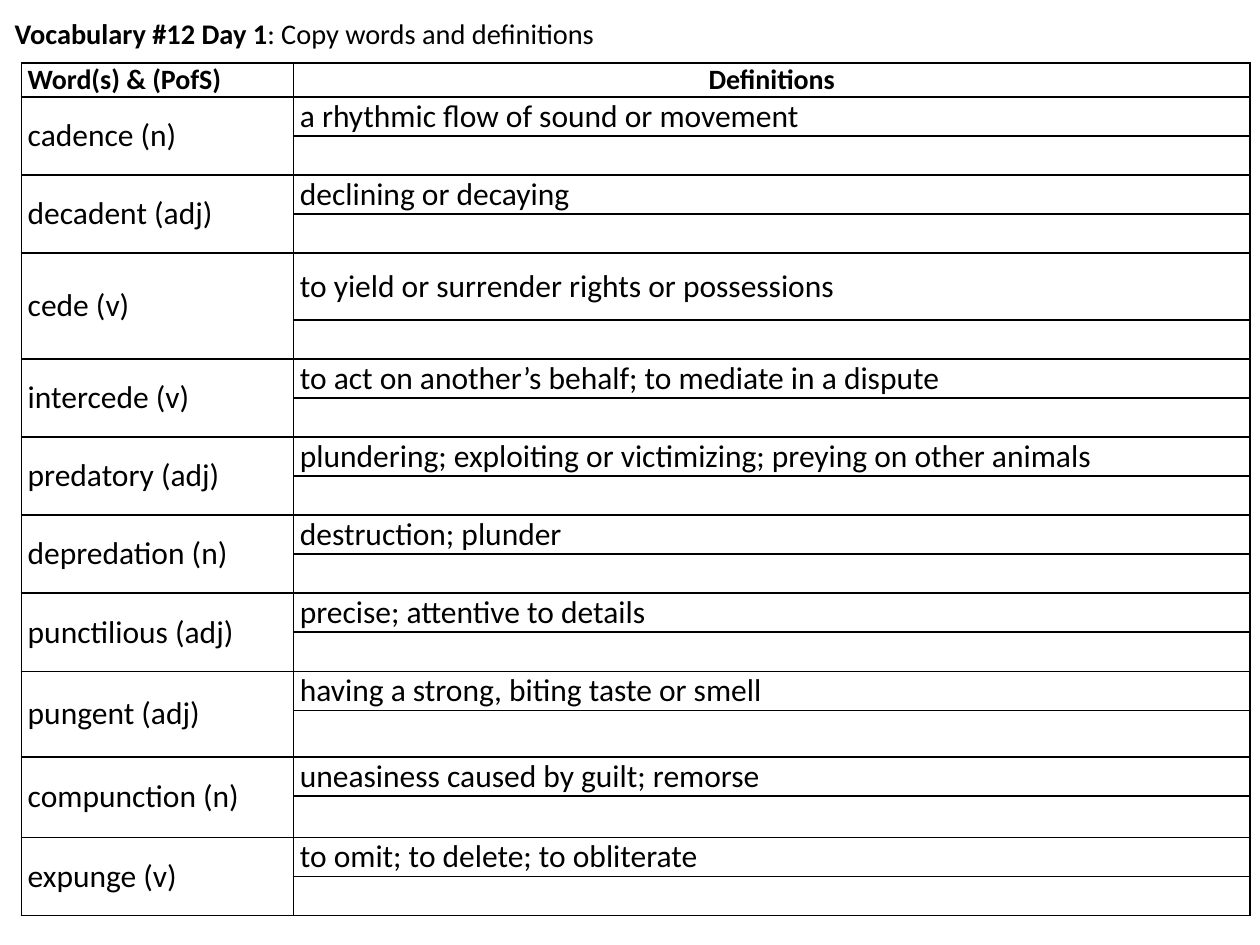
import dataclasses

import lxml.etree
import pptx
import pptx.dml.color
import pptx.enum.text
import pptx.oxml.ns
import pptx.util

Inches = pptx.util.Inches
ALIGN = pptx.enum.text.PP_ALIGN
MIDDLE = pptx.enum.text.MSO_ANCHOR.MIDDLE


@dataclasses.dataclass(frozen=True)
class Theme:
    """Colours, font and type sizes of the slide."""
    font: str = "Calibri"
    ink: str = "000000"
    paper: str = "FFFFFF"
    title: float = 16.2
    header: float = 16
    body: float = 18
    border: float = 1


class VocabularySlide:
    """Draws styled elements on the current slide."""

    def __init__(self, slide, theme):
        self.slide = slide
        self.theme = theme

    def add_text(self, p, text, **formats):
        r = p.add_run()
        r.text = text
        for name, value in {"name": self.theme.font, **formats}.items():
            setattr(r.font, name, value)
        r.font.color.rgb = pptx.dml.color.RGBColor.from_string(self.theme.ink)

    def title(self, box, lead, rest):
        tf = self.slide.shapes.add_textbox(*map(Inches, box)).text_frame
        formats = {"word_wrap": True, "vertical_anchor": MIDDLE,
                   "margin_left": 0, "margin_right": 0}
        for name, value in formats.items():
            setattr(tf, name, value)
        p = tf.paragraphs[0]
        p.alignment = ALIGN.CENTER
        size = pptx.util.Pt(self.theme.title)
        self.add_text(p, lead, size=size, bold=True)
        self.add_text(p, rest, size=size, bold=False)

    def table(self, box, widths, heights):
        frame = self.slide.shapes.add_table(
            len(heights), len(widths), *map(Inches, box))
        table = frame.table
        table.first_row = table.horz_banding = False
        for column, width in zip(table.columns, widths):
            column.width = Inches(width)
        for row, height in zip(table.rows, heights):
            row.height = Inches(height)
        for cell in table.iter_cells():
            self.style_cell(cell)
        return table

    def style_cell(self, cell):
        formats = {"margin_left": Inches(0.05), "margin_right": Inches(0.05),
                   "margin_top": 0, "margin_bottom": 0,
                   "vertical_anchor": MIDDLE}
        for name, value in formats.items():
            setattr(cell, name, value)
        cell.fill.solid()
        cell.fill.fore_color.rgb = pptx.dml.color.RGBColor.from_string(
            self.theme.paper)
        qn = pptx.oxml.ns.qn
        props = cell._tc.get_or_add_tcPr()
        for i, side in enumerate(("a:lnL", "a:lnR", "a:lnT", "a:lnB")):
            line = lxml.etree.Element(
                qn(side), w=str(pptx.util.Pt(self.theme.border)))
            fill = lxml.etree.SubElement(line, qn("a:solidFill"))
            lxml.etree.SubElement(fill, qn("a:srgbClr"), val=self.theme.ink)
            props.insert(i, line)

    def cell_text(self, cell, text, size, bold=False, align=ALIGN.LEFT):
        p = cell.text_frame.paragraphs[0]
        p.alignment = align
        self.add_text(p, text, size=pptx.util.Pt(size), bold=bold)


ROW = 0.31
HEADER_ROW = 0.27
TALL_ROWS = {5: 0.53, 16: 0.37, 18: 0.33}
ENTRIES = [
    ("cadence (n)", "a rhythmic flow of sound or movement"),
    ("decadent (adj)", "declining or decaying"),
    ("cede (v)", "to yield or surrender rights or possessions"),
    ("intercede (v)", "to act on another’s behalf; to mediate in a dispute"),
    ("predatory (adj)",
     "plundering; exploiting or victimizing; preying on other animals"),
    ("depredation (n)", "destruction; plunder"),
    ("punctilious (adj)", "precise; attentive to details"),
    ("pungent (adj)", "having a strong, biting taste or smell"),
    ("compunction (n)", "uneasiness caused by guilt; remorse"),
    ("expunge (v)", "to omit; to delete; to obliterate"),
]


def main():
    prs = pptx.Presentation()
    prs.slide_width, prs.slide_height = Inches(10), Inches(7.5)
    theme = Theme()
    s = VocabularySlide(prs.slides.add_slide(prs.slide_layouts[6]), theme)
    s.title((0, 0, 4.83, 0.53), "Vocabulary #12 Day 1",
            ": Copy words and definitions")

    heights = [HEADER_ROW] + [
        TALL_ROWS.get(i, ROW) for i in range(1, 2 * len(ENTRIES) + 1)]
    table = s.table((0.17, 0.5, 9.75, sum(heights)), (2.16, 7.59), heights)
    s.cell_text(table.cell(0, 0), "Word(s) & (PofS)", theme.header, True)
    s.cell_text(table.cell(0, 1), "Definitions", theme.header, True,
                ALIGN.CENTER)
    for i, (word, definition) in enumerate(ENTRIES):
        top = 2 * i + 1
        table.cell(top, 0).merge(table.cell(top + 1, 0))
        s.cell_text(table.cell(top, 0), word, theme.body)
        s.cell_text(table.cell(top, 1), definition, theme.body)
    prs.save("out.pptx")


if __name__ == "__main__":
    main()
